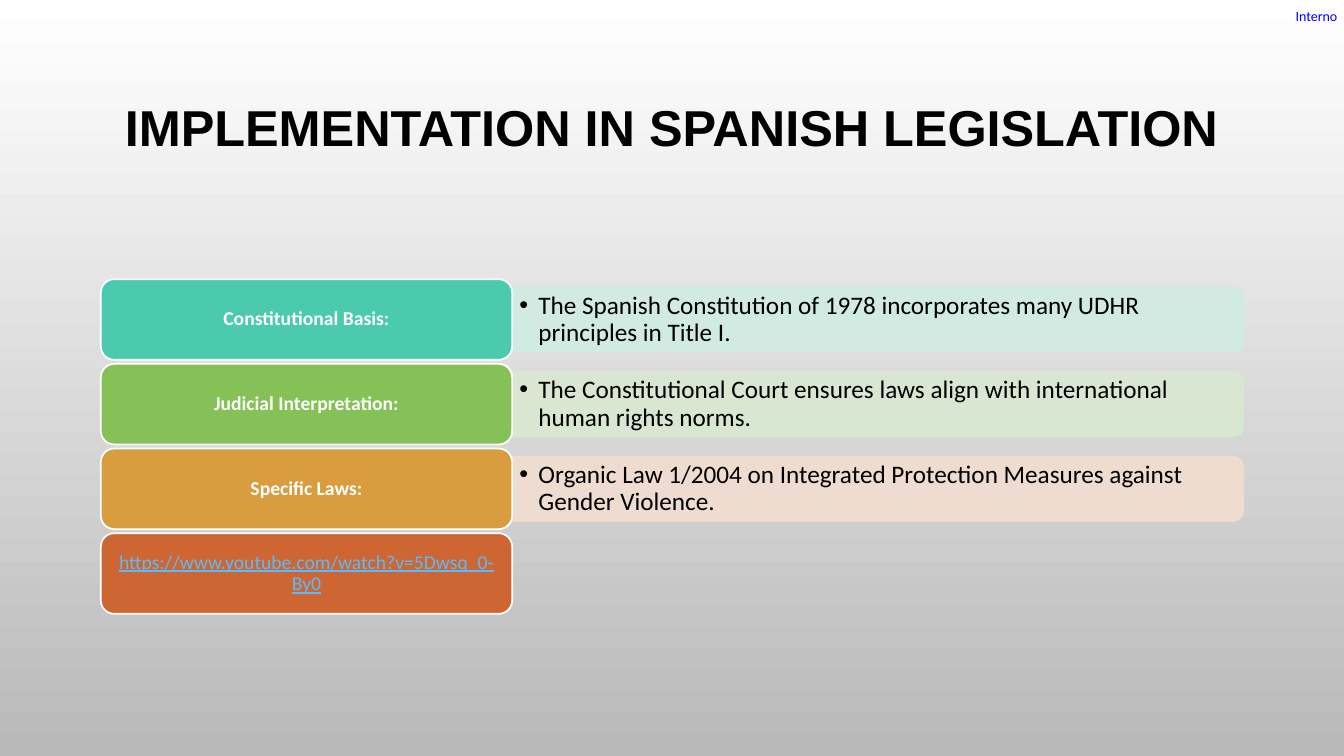
from lxml import etree
from pptx import Presentation, util as u
from pptx.dml.color import RGBColor
from pptx.enum import shapes, text
from pptx.oxml.ns import qn

COLORS = {
    "black": "000000", "white": "FFFFFF", "grey": "B9B9B9",
    "label": "0000FF", "link": "56BCFE",
    "teal": "4BCAAD", "teal_light": "D0ECE3",
    "green": "86C157", "green_light": "D9E9D1",
    "amber": "D99C3F", "amber_light": "F1DECF",
    "rust": "CE6633",
}

# Heading, its fill, and the detail beside it
TOPICS = [
    ("Constitutional Basis:", "teal",
     "The Spanish Constitution of 1978 incorporates many UDHR principles in Title I."),
    ("Judicial Interpretation:", "green",
     "The Constitutional Court ensures laws align with international human rights norms."),
    ("Specific Laws:", "amber",
     "Organic Law 1/2004 on Integrated Protection Measures against Gender Violence."),
]
VIDEO = "https://www.youtube.com/watch?v=5Dwsq_0-By0"


def rgb(name):
    return RGBColor.from_string(COLORS[name])


class Deck:
    """Style, grid and current slide; all lengths are in inches."""
    width, height = 13.33, 7.5
    left, top = 1, 2.77
    label_w, detail_w = 4.08, 7.25
    row_h, pitch = 0.8, 0.84
    body_font, title_font = "Calibri", "Arial"

    def __init__(self):
        self.prs = Presentation()
        self.prs.slide_width = u.Inches(self.width)
        self.prs.slide_height = u.Inches(self.height)
        self.s = self.prs.slides.add_slide(self.prs.slide_layouts[6])

    def background(self, start, end):
        fill = self.s.background.fill
        fill.gradient()
        fill.gradient_angle = 270
        for stop, name in zip(fill.gradient_stops, (start, end)):
            stop.color.rgb = rgb(name)

    def shape(self, kind, box, fill, line, opacity=None):
        sp = self.s.shapes.add_shape(kind, *map(u.Inches, box))
        sp.shadow.inherit = False
        sp.fill.solid()
        sp.fill.fore_color.rgb = rgb(fill)
        sp.line.color.rgb = rgb(line)
        sp.line.width = u.Pt(1.25)
        if opacity:
            for color in sp._element.spPr.iter(qn("a:srgbClr")):
                etree.SubElement(color, qn("a:alpha"), val=str(opacity * 1000))
        return sp

    def textbox(self, box):
        return self.s.shapes.add_textbox(*map(u.Inches, box))

    def add_text(self, sp, words, size, color, font=None, bold=False, underline=False,
                 align=text.PP_ALIGN.CENTER, insets=(0.1, 0.07, 0.1, 0.07),
                 spacing=0.9, wrap=True, bullet=False):
        tf = sp.text_frame
        tf.word_wrap = wrap
        tf.vertical_anchor = text.MSO_ANCHOR.MIDDLE
        (tf.margin_left, tf.margin_top,
         tf.margin_right, tf.margin_bottom) = map(u.Inches, insets)
        p = tf.paragraphs[0]
        p.alignment = align
        p.line_spacing = spacing
        if bullet:
            pPr = p._p.get_or_add_pPr()
            pPr.set("marL", str(u.Inches(0.19)))
            pPr.set("indent", str(-u.Inches(0.19)))
            etree.SubElement(pPr, qn("a:buFont"), typeface="Arial")
            etree.SubElement(pPr, qn("a:buChar"), char="•")
        r = p.add_run()
        r.text = words
        r.font.name = font or self.body_font
        r.font.size = u.Pt(size)
        r.font.color.rgb = rgb(color)
        r.font.bold = bold
        r.font.underline = underline

    def row_top(self, row):
        return self.top + row * self.pitch

    def label(self, row, words, fill, color="white", **style):
        box = (self.left, self.row_top(row), self.label_w, self.row_h)
        sp = self.shape(shapes.MSO_SHAPE.ROUNDED_RECTANGLE, box, fill, "white")
        self.add_text(sp, words, 14, color, **style)

    def detail(self, row, words, fill):
        x = self.left + self.label_w
        middle = self.row_top(row) + self.row_h / 2
        # Upright band, turned so that its round corners face right
        band_h = 0.8 * self.row_h
        box = (x + (self.detail_w - band_h) / 2, middle - self.detail_w / 2,
               band_h, self.detail_w)
        band = self.shape(shapes.MSO_SHAPE.ROUND_2_SAME_RECTANGLE, box, fill, fill, 90)
        band.rotation = 90
        sp = self.textbox((x, middle - 0.29, self.detail_w - 0.03, 0.58))
        self.add_text(sp, words, 18, "black", align=text.PP_ALIGN.LEFT,
                      insets=(0.07, 0.04, 0.07, 0.04), bullet=True)


def main():
    deck = Deck()
    deck.background("white", "grey")

    # Classification mark and title
    deck.add_text(deck.textbox((12.85, 0.07, 0.45, 0.17)), "Interno", 10, "label",
                  align=text.PP_ALIGN.LEFT, insets=(0, 0, 0, 0), spacing=1, wrap=False)
    deck.add_text(deck.textbox((1, 0.68, 11.33, 1.75)),
                  "IMPLEMENTATION IN SPANISH LEGISLATION", 36, "black",
                  font=deck.title_font, bold=True, insets=(0.1, 0.05, 0.1, 0.57))

    # Topic rows
    for row, (heading, color, words) in enumerate(TOPICS):
        deck.detail(row, words, color + "_light")
        deck.label(row, heading, color, bold=True)

    # Video address
    deck.label(len(TOPICS), VIDEO, "rust", "link", underline=True)

    deck.prs.save("out.pptx")


if __name__ == "__main__":
    main()
